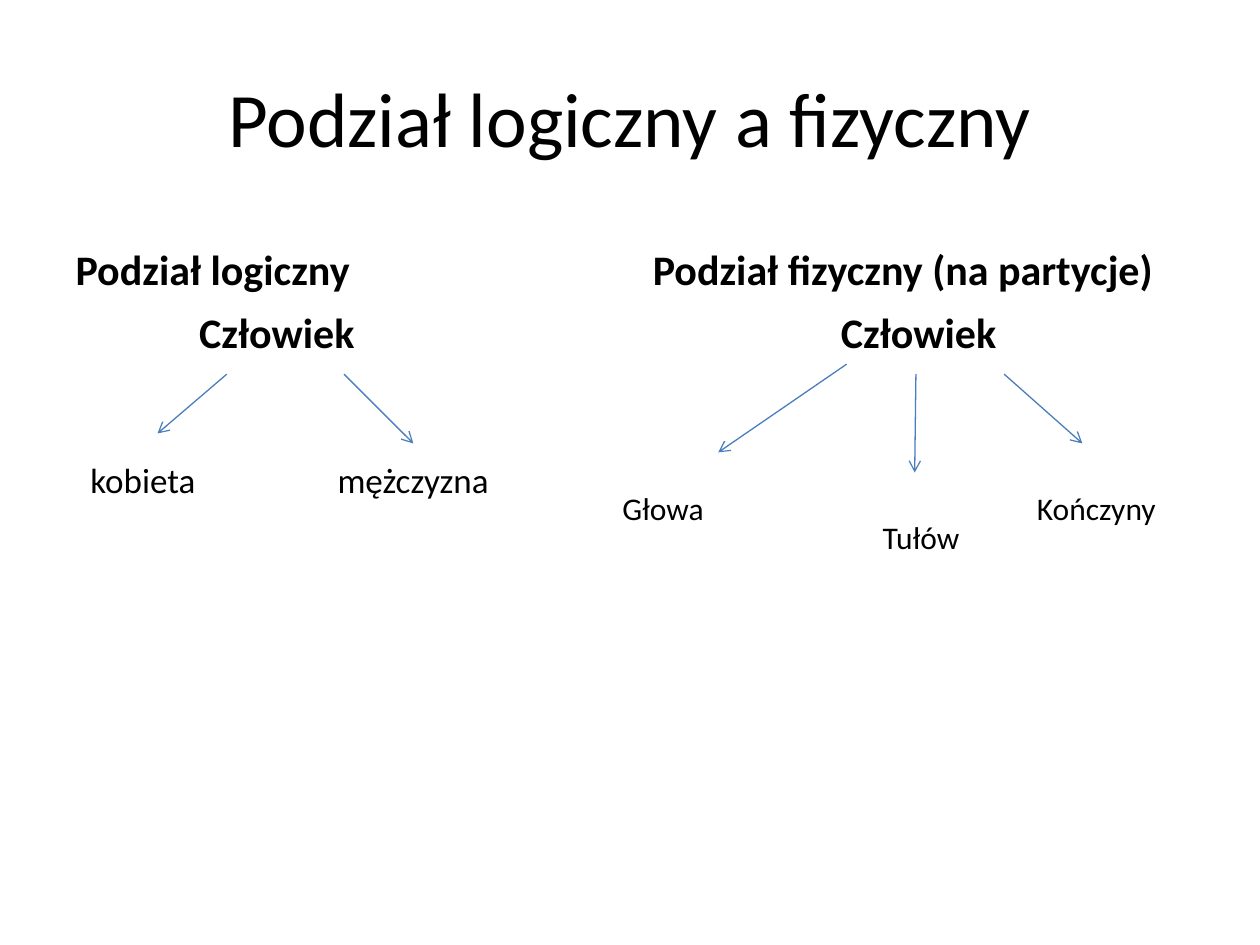
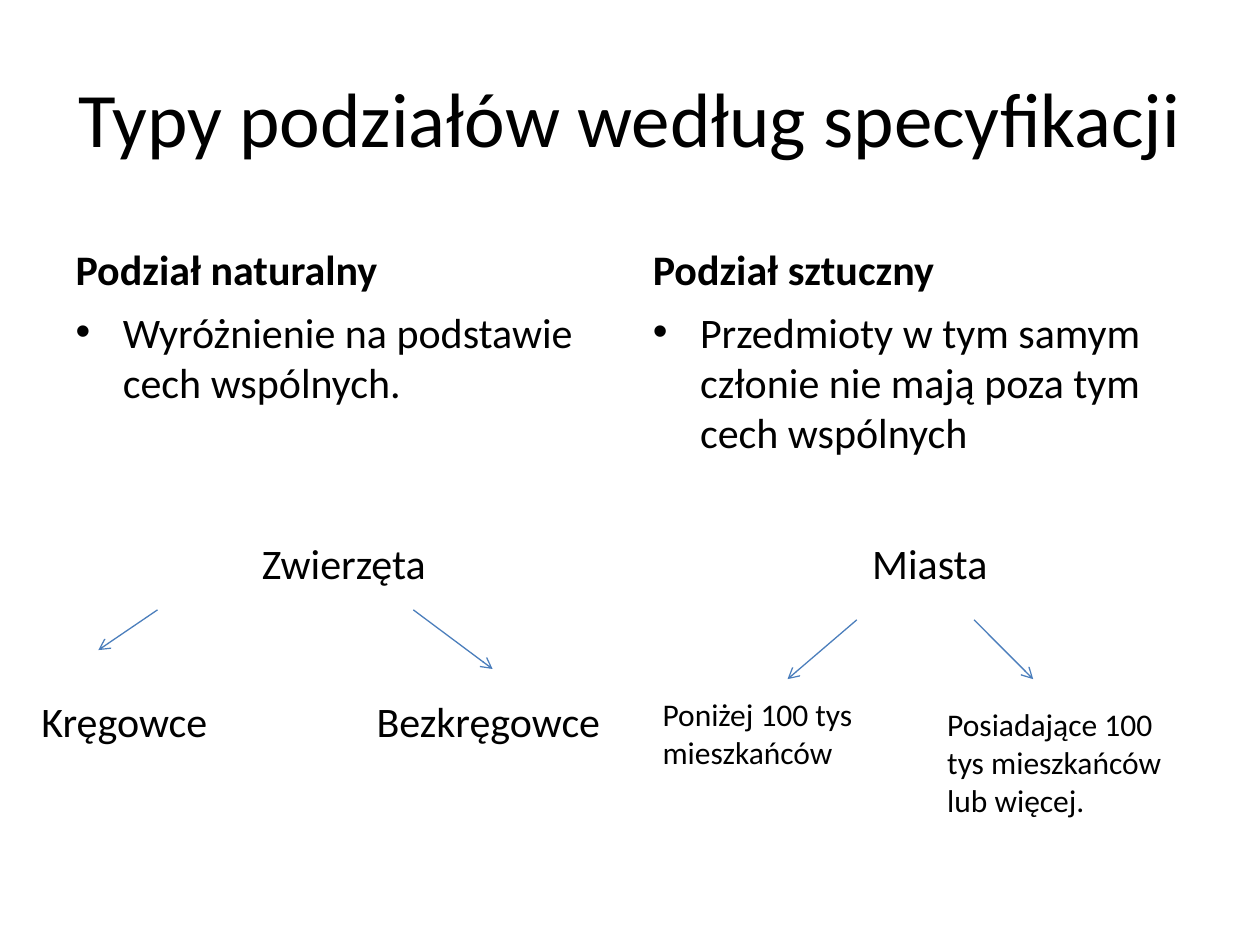
from pptx import Presentation
from pptx.dml.color import RGBColor
from pptx.enum.shapes import MSO_CONNECTOR as Link
from pptx.enum.text import MSO_ANCHOR as Anchor, MSO_AUTO_SIZE as Fit, PP_ALIGN as Align
from pptx.oxml.ns import qn
from pptx.util import Pt
from lxml.etree import SubElement

FONT, INK, BLUE = "Calibri", "000000", "4B7EBC"
COLS = (36, 365.8)
WIDE = 318.2
COMPARE = 4  # layout: title, then heading and list twice


def paint(color, code):
    color.rgb = RGBColor.from_string(code)


def style(para, size, bold=False, align=Align.LEFT):
    para.alignment = align
    para.space_before = Pt(0)
    para.font.name = FONT
    para.font.size = Pt(size)
    para.font.bold = bold
    paint(para.font.color, INK)


def place(shape, left, top, width, height):
    shape.left, shape.top = Pt(left), Pt(top)
    shape.width, shape.height = Pt(width), Pt(height)


def fill(holder, text, box, anchor, size, bold=False, align=Align.LEFT):
    """Move a placeholder, set its text and return its paragraph."""
    place(holder, *box)
    frame = holder.text_frame
    frame.text = text
    frame.auto_size = Fit.NONE
    frame.vertical_anchor = anchor
    style(frame.paragraphs[0], size, bold, align)
    return frame.paragraphs[0]


def plain(para, indent=0):
    """Drop the bullet and start the first line at the indent."""
    props = para._p.get_or_add_pPr()
    props.set("marL", "0")
    props.set("indent", str(Pt(indent)))
    props.insert_element_before(
        props.makeelement(qn("a:buNone"), {}), "a:tabLst", "a:defRPr", "a:extLst")


def start(deck, title, heads):
    """Add a slide with its title and two headings; return it and both lists."""
    slide = deck.slides.add_slide(deck.slide_layouts[COMPARE])
    parts = slide.placeholders
    fill(slide.shapes.title, title, (36, 21.6, 648, 90), Anchor.MIDDLE, 44,
         align=Align.CENTER)
    for i, (left, head) in enumerate(zip(COLS, heads)):
        fill(parts[2 * i + 1], head, (left, 120.9, WIDE, 50.4), Anchor.BOTTOM,
             24, True)
    return slide, (parts[2], parts[4])


def body(holder, left, text, bold=False, align=Align.LEFT):
    return fill(holder, text, (left, 171.3, WIDE, 311.2), Anchor.TOP, 24, bold, align)


def label(slide, text, left, top, width, size, align=Align.LEFT, rows=1):
    high = 1.22 * size * rows + 7.2
    box = slide.shapes.add_textbox(Pt(left), Pt(top), Pt(width), Pt(high))
    frame = box.text_frame
    frame.word_wrap = True
    frame.auto_size = Fit.SHAPE_TO_FIT_TEXT
    frame.text = text
    style(frame.paragraphs[0], size, align=align)


def arrow(slide, *ends):
    line = slide.shapes.add_connector(Link.STRAIGHT, *map(Pt, ends))
    line.line.width = Pt(0.75)
    paint(line.line.color, BLUE)
    SubElement(line.line._get_or_add_ln(), qn("a:tailEnd"), type="arrow")
    SubElement(line._element.spPr, qn("a:effectLst"))


def draw(slide, arrows, labels):
    for ends in arrows:
        arrow(slide, *ends)
    for args in labels:
        label(slide, *args)


def logic(deck):
    slide, lists = start(deck, "Podział logiczny a fizyczny",
                         ("Podział logiczny", "Podział fizyczny (na partycje)"))
    # Roots of both trees
    plain(body(lists[0], COLS[0], "Człowiek", True), 70.6)
    plain(body(lists[1], COLS[1], "Człowiek", True, Align.CENTER))
    # Branches and leaves
    top = 213.8
    draw(slide, (
        (129.6, top, 90, 247.7),
        (196.6, top, 236.2, 253.4),
        (483.8, 208.1, 410.4, 258.5),
        (523.4, top, 522.7, 270),
        (573.8, top, 618.5, 253.4),
    ), (
        ("kobieta", 0, 258.5, 163.4, 20, Align.CENTER),
        ("mężczyzna", 185.8, 258.5, 163.4, 20),
        ("Głowa", 348.5, 275.8, 123.8, 18),
        ("Tułów", 461.5, 292.3, 129.6, 18, Align.CENTER),
        ("Kończyny", 585.4, 275.8, 101.5, 18),
    ))


def types(deck):
    slide, lists = start(deck, "Typy podziałów według specyfikacji",
                         ("Podział naturalny", "Podział sztuczny"))
    # Bulleted meanings
    notes = ("Wyróżnienie na podstawie cech wspólnych.",
             "Przedmioty w tym samym członie nie mają poza tym cech wspólnych")
    for holder, left, note in zip(lists, COLS, notes):
        body(holder, left, note)
    # Example trees
    root, leaf = 303.8, 393.8
    draw(slide, (
        (90, 348.5, 56.2, 371.5),
        (236.2, 348.5, 281.5, 382.3),
        (489.6, 354.2, 450, 388.1),
        (556.6, 354.2, 590.4, 388.1),
    ), (
        ("Zwierzęta", 44.6, root, 303.8, 24, Align.CENTER),
        ("Kręgowce", 16.6, leaf, 140.4, 24),
        ("Bezkręgowce", 208.1, leaf, 146.2, 24),
        ("Miasta", 382.3, root, 298.1, 24, Align.CENTER),
        ("Poniżej 100 tys mieszkańców", 371.5, leaf, 135.4, 18, Align.LEFT, 2),
        ("Posiadające 100 tys mieszkańców lub więcej.", 534.2, 399.6, 140.4, 18,
         Align.LEFT, 3),
    ))


def main():
    deck = Presentation()
    deck.slide_width, deck.slide_height = Pt(720), Pt(540)
    logic(deck)
    types(deck)
    deck.save("out.pptx")


if __name__ == "__main__":
    main()
